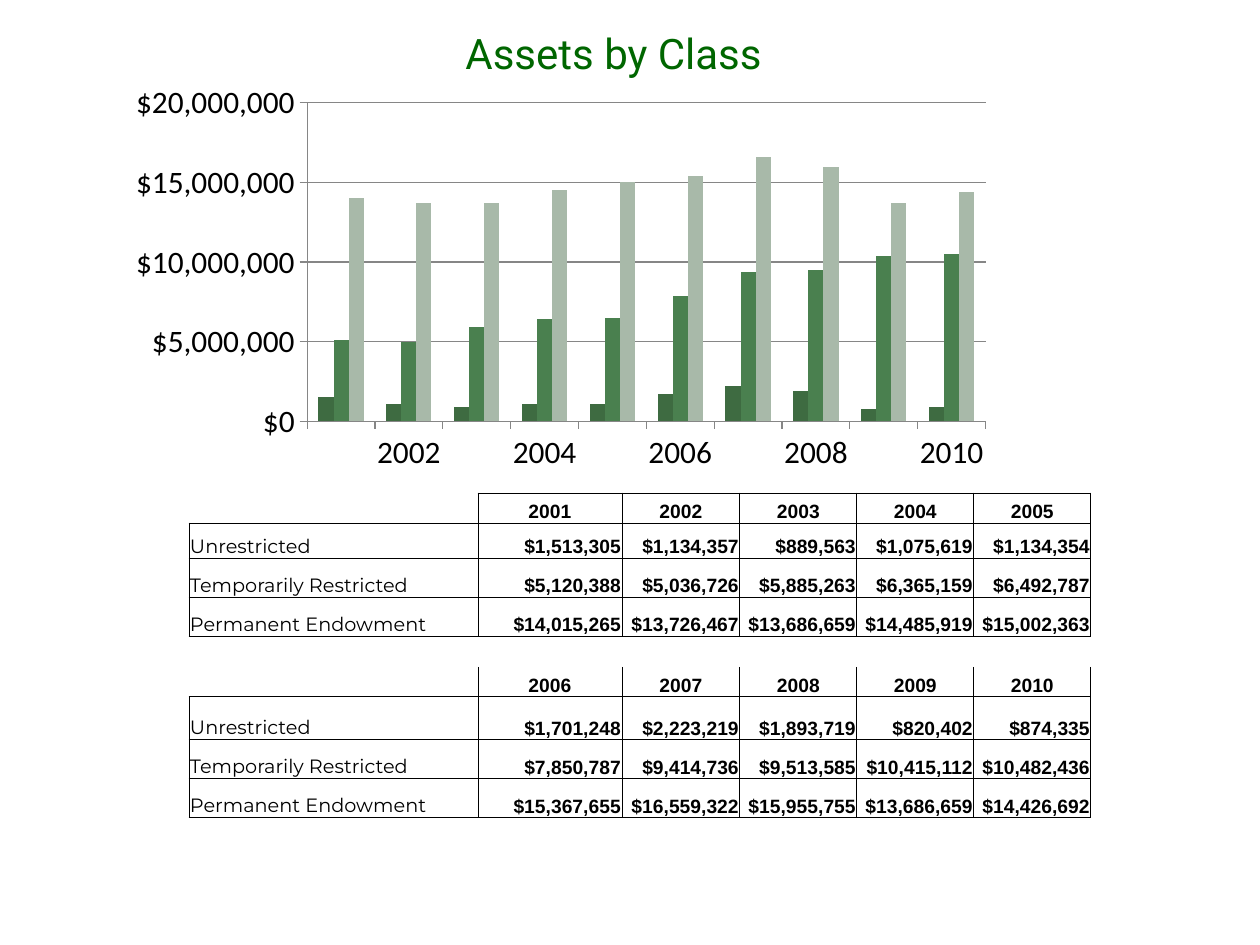
"""Build the Assets by Class slide with a column chart and a two-part table."""
from dataclasses import dataclass
from itertools import accumulate

from lxml.etree import SubElement as Sub
from pptx import Presentation
from pptx.chart.data import CategoryChartData as Data
from pptx.dml.color import RGBColor as Rgb
from pptx.enum.chart import XL_CHART_TYPE as Kind, XL_TICK_MARK as Tick
from pptx.enum.text import MSO_ANCHOR as Anchor, PP_ALIGN as Align
from pptx.oxml.ns import qn
from pptx.util import Emu, Pt

SCALE = 914400 / 126
HUES = {"title": "006600", "text": "000000", "line": "000000", "axis": "868686"}
YEARS = range(2001, 2011)
HALF = 5
COLS = [289, 144, 118, 117, 117, 117]
ROWS = [30, 35, 39, 39, 31, 30, 43, 39, 39]


@dataclass(frozen=True)
class Fund:
    name: str
    label: str
    hue: str
    sums: tuple[int, ...]


@dataclass(frozen=True)
class Style:
    face: str
    size: int
    hue: str = "text"
    bold: bool = False
    align: Align = Align.LEFT


FUNDS = [
    Fund("Unrestricted", "Unrestricted", "3E6B41",
         (1513305, 1134357, 889563, 1075619, 1134354,
          1701248, 2223219, 1893719, 820402, 874335)),
    Fund("Temporarily Restricted", "Temp Restricted", "4A804F",
         (5120388, 5036726, 5885263, 6365159, 6492787,
          7850787, 9414736, 9513585, 10415112, 10482436)),
    Fund("Permanent Endowment", "Endowment", "A8B9A9",
         (14015265, 13726467, 13686659, 14485919, 15002363,
          15367655, 16559322, 15955755, 13686659, 14426692)),
]
TITLE = Style("Roboto", 24, "title", align=Align.CENTER)
NAME = Style("Montserrat", 11)
YEAR = Style("Arial", 11, bold=True, align=Align.CENTER)
MONEY = Style("Arial", 11, bold=True, align=Align.RIGHT)


def px(n: int) -> Emu:
    return Emu(round(n * SCALE))


def write(frame, text: str, style: Style) -> None:
    para = frame.paragraphs[0]
    para.alignment = style.align
    run = para.add_run()
    run.text = text
    font = run.font
    font.name, font.size, font.bold = style.face, Pt(style.size), style.bold
    font.color.rgb = Rgb.from_string(HUES[style.hue])


def add_title(slide) -> None:
    title = slide.shapes.title
    title.left, title.top, title.width, title.height = map(px, (262, 21, 703, 102))
    title.text_frame.vertical_anchor = Anchor.TOP
    write(title.text_frame, "Assets by Class", TITLE)


def set_plot(chart) -> None:
    area = chart._chartSpace.chart.plotArea
    for old in area.findall(qn("c:layout")):
        area.remove(old)
    layout = Sub(area, qn("c:layout"))
    area.insert(0, layout)
    box = Sub(layout, qn("c:manualLayout"))
    parts = {"layoutTarget": "inner", "xMode": "edge", "yMode": "edge",
             "x": "0.172", "y": "0.037", "w": "0.698", "h": "0.807"}
    for tag, val in parts.items():
        Sub(box, qn(f"c:{tag}")).set("val", val)


def add_graph(slide) -> None:
    data = Data(number_format='"$"#,##0')
    data.categories = ["" if year % 2 else str(year) for year in YEARS]
    for fund in FUNDS:
        data.add_series(fund.label, [round(n, -5) for n in fund.sums])
    area = map(px, (136, 84, 976, 399))
    chart = slide.shapes.add_chart(Kind.COLUMN_CLUSTERED, *area, data).chart
    chart.has_legend = chart.has_title = False
    chart.font.name, chart.font.size = "Calibri", Pt(18)
    chart.font.color.rgb = Rgb.from_string(HUES["text"])
    plot = chart.plots[0]
    plot.gap_width, plot.overlap, plot.vary_by_categories = 150, 0, False
    for fund, series in zip(FUNDS, plot.series):
        series.format.fill.solid()
        series.format.fill.fore_color.rgb = Rgb.from_string(fund.hue)
    axis = chart.value_axis
    axis.minimum_scale, axis.maximum_scale, axis.major_unit = 0, 20000000, 5000000
    axis.tick_labels.number_format = '"$"#,##0'
    axis.tick_labels.number_format_is_linked = False
    axis.has_major_gridlines = True
    for part in (axis, chart.category_axis, axis.major_gridlines):
        part.format.line.color.rgb = Rgb.from_string(HUES["axis"])
        part.format.line.width = Pt(0.75)
    for part in (axis, chart.category_axis):
        part.major_tick_mark = Tick.OUTSIDE
    set_plot(chart)


def set_cell(cell, sides: str, text: str = "", style: Style = NAME) -> None:
    cell.margin_left = cell.margin_right = cell.margin_top = px(1)
    cell.margin_bottom = 0
    cell.vertical_anchor = Anchor.BOTTOM
    props = cell._tc.get_or_add_tcPr()
    for side in "LRTB":
        line = Sub(props, qn(f"a:ln{side}"), w=str(Pt(0.5)))
        if side in sides:
            fill = Sub(line, qn("a:solidFill"))
            Sub(fill, qn("a:srgbClr"), val=HUES["line"])
        else:
            Sub(line, qn("a:noFill"))
    cell.fill.background()
    if text:
        write(cell.text_frame, text, style)
    else:
        para = cell.text_frame.paragraphs[0]
        Sub(para._p, qn("a:endParaRPr"), sz=str(style.size * 100))


def add_block(table, top: int, start: int, sides: str) -> None:
    span = slice(start, start + HALF)
    set_cell(table.cell(top, 0), "RB")
    for col, year in enumerate(YEARS[span], 1):
        set_cell(table.cell(top, col), sides, str(year), YEAR)
    for row, fund in enumerate(FUNDS, top + 1):
        set_cell(table.cell(row, 0), "LRTB", fund.name, NAME)
        for col, n in enumerate(fund.sums[span], 1):
            set_cell(table.cell(row, col), "LRTB", f"${n:,}", MONEY)


def add_grid(slide) -> None:
    size = len(ROWS), len(COLS)
    area = map(px, (189, 493, sum(COLS), sum(ROWS)))
    table = slide.shapes.add_table(*size, *area).table
    table.first_row = table.horz_banding = False
    for parts, sizes, attr in ((table.columns, COLS, "width"),
                               (table.rows, ROWS, "height")):
        ends = [px(n) for n in accumulate(sizes, initial=0)]
        for part, near, far in zip(parts, ends, ends[1:]):
            setattr(part, attr, Emu(far - near))
    gap = len(FUNDS) + 1
    add_block(table, 0, 0, "LRTB")
    for col in range(len(COLS)):
        set_cell(table.cell(gap, col), "T")
    table.cell(gap, 0).merge(table.cell(gap, len(COLS) - 1))
    add_block(table, gap + 1, HALF, "LRB")


def main() -> None:
    deck = Presentation()
    deck.slide_width, deck.slide_height = px(1260), px(945)
    slide = deck.slides.add_slide(deck.slide_layouts[5])
    add_title(slide)
    add_graph(slide)
    add_grid(slide)
    deck.save("out.pptx")


if __name__ == "__main__":
    main()
